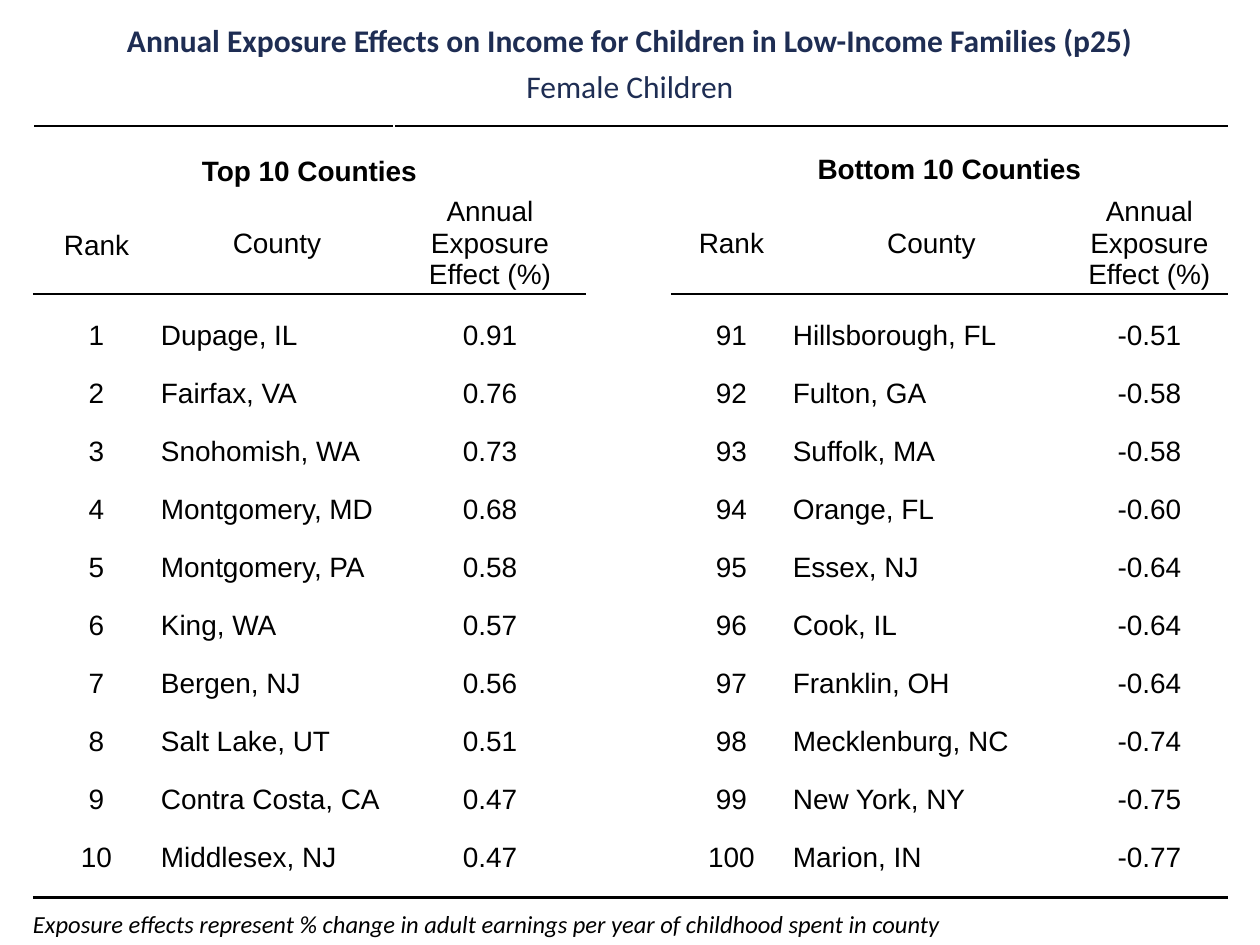
from dataclasses import dataclass

from lxml.etree import SubElement
from pptx import Presentation
from pptx.dml.color import RGBColor
from pptx.enum.text import MSO_ANCHOR, PP_ALIGN
from pptx.oxml.ns import qn
from pptx.util import Emu, Pt

EMU_PER_INCH, PX_PER_INCH = 914400, 126
NO_STYLE = "{2D5ABB26-0587-4C30-8999-92F81FD0307C}"


@dataclass(frozen=True)
class Theme:
    navy: str = "1E2D53"
    black: str = "000000"
    white: str = "FFFFFF"
    heading_font: str = "Calibri"
    table_font: str = "Arial"
    title_size: int = 18
    table_size: int = 16
    note_size: int = 14
    empty_size: int = 6
    thick: float = 1.5
    thin: float = 1


def px(n):
    return Emu(n * EMU_PER_INCH // PX_PER_INCH)


class Deck:
    def __init__(self, theme):
        self.theme = theme
        self.prs = Presentation()
        self.prs.slide_width, self.prs.slide_height = px(1260), px(945)
        self.s = self.prs.slides.add_slide(self.prs.slide_layouts[6])

    def style(self, p, text, font, size, color, align, bold=False, italic=False):
        p.add_run().text = text
        p.alignment = align
        p.font.name, p.font.size = font, Pt(size)
        p.font.bold, p.font.italic = bold, italic
        p.font.color.rgb = RGBColor.from_string(color)

    def text(self, box, text, size, color, align=PP_ALIGN.CENTER, inset=(0, 0), **emphasis):
        sp = self.s.shapes.add_textbox(*map(px, box))
        tf = sp.text_frame
        tf.word_wrap = True
        tf.margin_left = tf.margin_right = px(inset[0])
        tf.margin_top = tf.margin_bottom = px(inset[1])
        self.style(tf.paragraphs[0], text, self.theme.heading_font, size, color, align, **emphasis)

    def table(self, left, top, widths, heights):
        frame = self.s.shapes.add_table(
            len(heights), len(widths), px(left), px(top), px(sum(widths)), px(sum(heights)))
        tbl = frame.table
        tbl.first_row = tbl.horz_banding = False
        tbl._tbl.tblPr.find(qn("a:tableStyleId")).text = NO_STYLE
        for col, width in zip(tbl.columns, widths):
            col.width = px(width)
        for row, height in zip(tbl.rows, heights):
            row.height = px(height)
        for cell in tbl.iter_cells():
            cell.fill.solid()
            cell.fill.fore_color.rgb = RGBColor.from_string(self.theme.white)
            cell.margin_left = cell.margin_right = cell.margin_top = cell.margin_bottom = 0
            end = cell.text_frame.paragraphs[0]._p.get_or_add_endParaRPr()
            end.set("sz", str(self.theme.empty_size * 100))
        return tbl

    def cell(self, cell, text, align=PP_ALIGN.CENTER, anchor=MSO_ANCHOR.MIDDLE,
             inset=8, bold=False, spacing=None):
        cell.vertical_anchor = anchor
        cell.margin_left = cell.margin_right = px(inset)
        p = cell.text_frame.paragraphs[0]
        self.style(p, text, self.theme.table_font, self.theme.table_size,
                   self.theme.black, align, bold)
        p.line_spacing = spacing
        p._p.get_or_add_endParaRPr().set("sz", str(self.theme.table_size * 100))

    def borders(self, cell, **sides):
        tcPr = cell._tc.get_or_add_tcPr()
        drawn = [side for side in "LRTB" if side in sides]
        for i, side in enumerate(drawn):
            color, width = sides[side]
            ln = SubElement(tcPr, qn(f"a:ln{side}"), w=str(Pt(width)))
            SubElement(SubElement(ln, qn("a:solidFill")), qn("a:srgbClr"), val=color)
            tcPr.insert(i, ln)


TOP = [
    ("Dupage, IL", "0.91"), ("Fairfax, VA", "0.76"), ("Snohomish, WA", "0.73"),
    ("Montgomery, MD", "0.68"), ("Montgomery, PA", "0.58"), ("King, WA", "0.57"),
    ("Bergen, NJ", "0.56"), ("Salt Lake, UT", "0.51"), ("Contra Costa, CA", "0.47"),
    ("Middlesex, NJ", "0.47"),
]
BOTTOM = [
    ("Hillsborough, FL", "-0.51"), ("Fulton, GA", "-0.58"), ("Suffolk, MA", "-0.58"),
    ("Orange, FL", "-0.60"), ("Essex, NJ", "-0.64"), ("Cook, IL", "-0.64"),
    ("Franklin, OH", "-0.64"), ("Mecklenburg, NC", "-0.74"), ("New York, NY", "-0.75"),
    ("Marion, IN", "-0.77"),
]
HEADERS = ("Rank", "County", "Annual Exposure Effect (%)")
GROUPS = [(0, "Top 10 Counties", 1, TOP, 1.15), (4, "Bottom 10 Counties", 91, BOTTOM, None)]
WIDTHS = [127, 234, 192, 85, 121, 279, 157]
HEIGHTS = [21, 46, 94] + [58] * 10 + [24]


def main():
    theme = Theme()
    deck = Deck(theme)
    deck.text((0, 67, 1260, 38), "Female Children", theme.title_size, theme.navy)

    tbl = deck.table(33, 126, WIDTHS, HEIGHTS)
    thick, thin = (theme.black, theme.thick), (theme.black, theme.thin)
    gap = (theme.white, theme.thin)
    last = len(HEIGHTS) - 1
    for c in range(len(WIDTHS)):
        edges = {"L": gap} if c in (0, 2) else {"R": gap} if c in (1, 6) else {}
        deck.borders(tbl.cell(0, c), T=thick, **edges)
        deck.borders(tbl.cell(last, c), B=thick)
    for first, end in ((0, 1), (2, 6)):
        tbl.cell(0, first).merge(tbl.cell(0, end))

    for col, name, first_rank, counties, spacing in GROUPS:
        tbl.cell(1, col).merge(tbl.cell(1, col + 2))
        deck.cell(tbl.cell(1, col), name, bold=True, spacing=spacing)
        for i, header in enumerate(HEADERS):
            deck.cell(tbl.cell(2, col + i), header, spacing=spacing if i == 0 else None)
            deck.borders(tbl.cell(2, col + i), B=thin)
        for n, (county, effect) in enumerate(counties):
            for i, value in enumerate((str(first_rank + n), county, effect)):
                align = PP_ALIGN.LEFT if i == 1 else PP_ALIGN.CENTER
                deck.cell(tbl.cell(3 + n, col + i), value, align, MSO_ANCHOR.BOTTOM, inset=1)

    deck.text((21, 903, 1040, 77),
              "Exposure effects represent % change in adult earnings per year "
              "of childhood spent in county",
              theme.note_size, theme.black, PP_ALIGN.LEFT, (12, 6), italic=True)
    deck.text((0, 21, 1260, 38),
              "Annual Exposure Effects on Income for Children in Low-Income Families (p25)",
              theme.title_size, theme.navy, bold=True)
    deck.prs.save("out.pptx")


if __name__ == "__main__":
    main()
